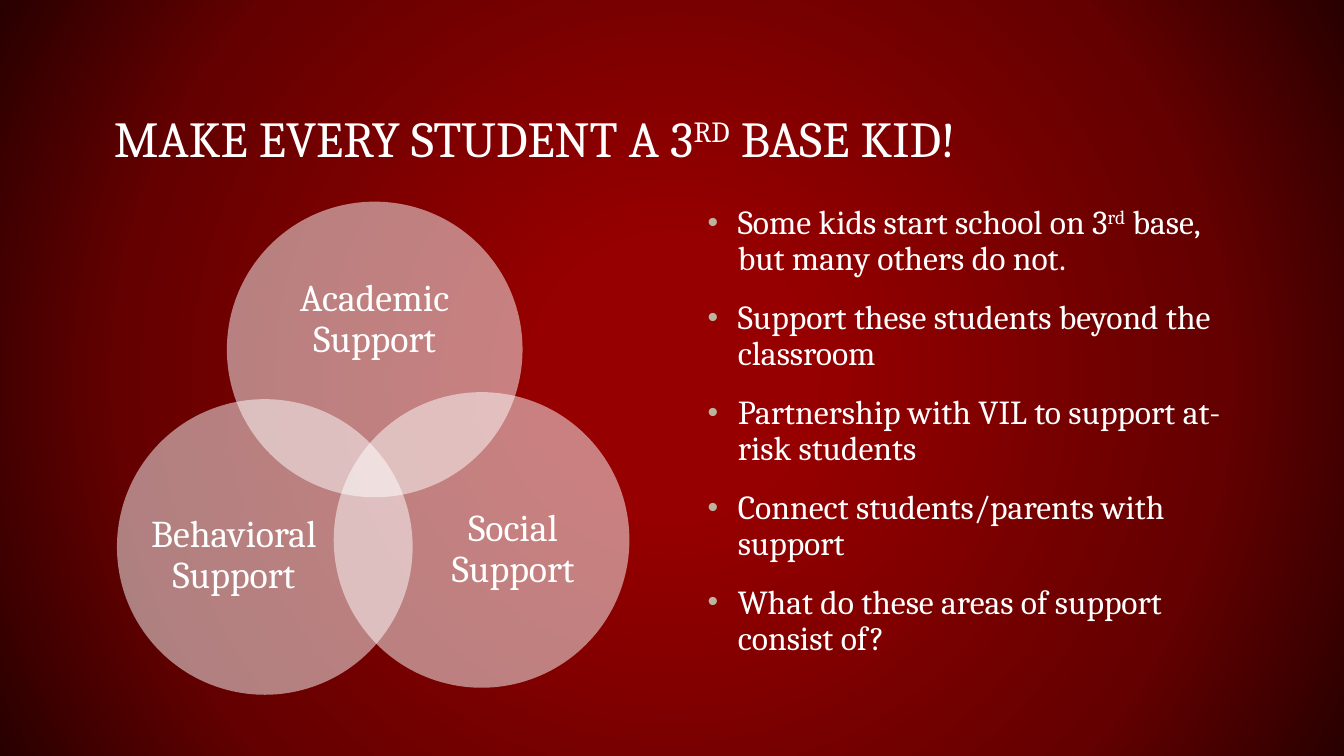
from lxml import etree
from pptx import Presentation
from pptx.dml.color import RGBColor
from pptx.enum.shapes import MSO_SHAPE
from pptx.enum.text import MSO_ANCHOR, PP_ALIGN
from pptx.oxml import parse_xml
from pptx.oxml.ns import nsdecls, qn
from pptx.util import Inches, Pt

OVAL = MSO_SHAPE.OVAL
TOP, MIDDLE, BOTTOM = MSO_ANCHOR.TOP, MSO_ANCHOR.MIDDLE, MSO_ANCHOR.BOTTOM
CENTER = PP_ALIGN.CENTER

COLORS = {
    "text": "FFFFFF",
    "circle": "FFFFFF",
    "bullet": "BCB49E",
    "glow": "960000",
    "mid": "650000",
    "edge": "290000",
}
FONT = "Cambria"

# Text parts: every second part is superscript
TITLE = ["MAKE EVERY STUDENT A 3", "RD", " BASE KID!"]
POINTS = [
    ["Some kids start school on 3", "rd", " base, but many others do not."],
    ["Support these students beyond the classroom"],
    ["Partnership with VIL to support at-risk students"],
    ["Connect students/parents with support"],
    ["What do these areas of support consist of?"],
]

# Label, circle corner and label box, in percent of the slide's size
CIRCLE_WIDTH = 22
SUPPORTS = [
    ("Academic Support", (16.88, 26.67), (19.8, 33.47, 16.13, 17.6)),
    ("Social Support", (24.83, 51.87), (31.58, 62, 13.2, 21.47)),
    ("Behavioral Support", (8.7, 52.8), (10.8, 62.8, 13.2, 21.47)),
]


class SlideBuilder:
    """Holds the style and the page; lengths are percent of the slide's size."""

    def __init__(self, deck):
        self.width, self.height = deck.slide_width, deck.slide_height
        self.page = deck.slides.add_slide(deck.slide_layouts[6])

    def x(self, share):
        return round(self.width * share / 100)

    def y(self, share):
        return round(self.height * share / 100)

    def background(self, stops):
        stop_xml = "".join(
            f'<a:gs pos="{share * 1000}"><a:srgbClr val="{COLORS[name]}"/></a:gs>'
            for share, name in stops
        )
        fill = parse_xml(
            f'<p:bg {nsdecls("p", "a")}><p:bgPr><a:gradFill rotWithShape="1">'
            f"<a:gsLst>{stop_xml}</a:gsLst>"
            '<a:path path="circle">'
            '<a:fillToRect l="50000" t="50000" r="50000" b="50000"/></a:path>'
            "</a:gradFill><a:effectLst/></p:bgPr></p:bg>"
        )
        self.page.element.cSld.insert(0, fill)

    def circle(self, parent, left, top, width):
        size = self.x(width)
        shape = parent.add_shape(OVAL, self.x(left), self.y(top), size, size)
        shape.shadow.inherit = False
        shape.fill.solid()
        shape.fill.fore_color.rgb = RGBColor.from_string(COLORS["circle"])
        shape.line.fill.background()
        color = shape.element.spPr.find(qn("a:solidFill"))[0]
        etree.SubElement(color, qn("a:alpha"), val="50000")

    def text(self, parent, area, paragraphs, size, anchor, spacing, margins=(0, 0)):
        left, top, width, height = area
        box = parent.add_textbox(
            self.x(left), self.y(top), self.x(width), self.y(height)
        )
        frame = box.text_frame
        frame.word_wrap = True
        frame.vertical_anchor = anchor
        frame.margin_left = frame.margin_right = Inches(margins[0])
        frame.margin_top = frame.margin_bottom = Inches(margins[1])
        for index, parts in enumerate(paragraphs):
            para = frame.add_paragraph() if index else frame.paragraphs[0]
            para.line_spacing = spacing
            for position, part in enumerate(parts):
                span = para.add_run()
                span.text = part
                span.font.name = FONT
                span.font.size = Pt(size)
                span.font.color.rgb = RGBColor.from_string(COLORS["text"])
                if position % 2:
                    span.font._element.set("baseline", "30000")
        return frame.paragraphs

    def bullets(self, area, points):
        for para in self.text(
            self.page.shapes, area, points, 24, TOP, 0.9, (0.13, 0.07)
        ):
            para.space_before = Pt(16)
            props = para._p.get_or_add_pPr()
            props.set("marL", str(Inches(0.3)))
            props.set("indent", str(-Inches(0.3)))
            color = etree.SubElement(props, qn("a:buClr"))
            etree.SubElement(color, qn("a:srgbClr"), val=COLORS["bullet"])
            etree.SubElement(props, qn("a:buSzPct"), val="90000")
            etree.SubElement(props, qn("a:buFont"), typeface="Arial")
            etree.SubElement(props, qn("a:buChar"), char="•")

    def venn(self, supports):
        group = self.page.shapes.add_group_shape().shapes
        for label, corner, area in supports:
            self.circle(group, *corner, CIRCLE_WIDTH)
            for para in self.text(group, area, [[label]], 27, MIDDLE, 0.9):
                para.alignment = CENTER


def main():
    deck = Presentation()
    deck.slide_width, deck.slide_height = Inches(13.33), Inches(7.5)
    slide = SlideBuilder(deck)

    # Background and title
    slide.background([(17, "glow"), (71, "mid"), (100, "edge")])
    slide.text(
        slide.page.shapes, (7.5, 5.33, 85, 17.73), [TITLE], 36, BOTTOM, 0.8, (0.13, 0.07)
    )

    # Bullet list and overlapping circles
    slide.bullets((51.67, 26.27, 40.83, 65.2), POINTS)
    slide.venn(SUPPORTS)

    deck.save("out.pptx")


if __name__ == "__main__":
    main()
